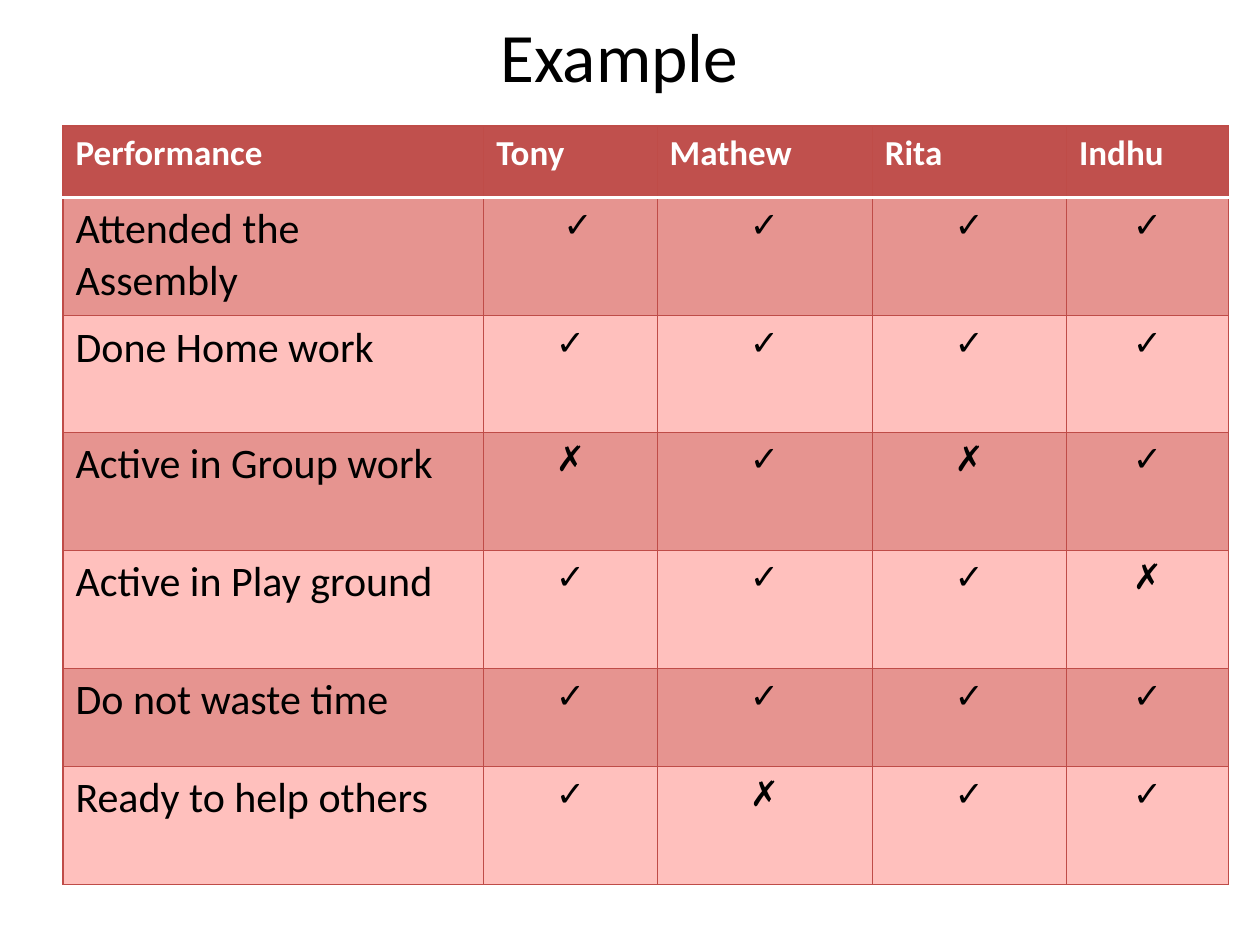
from dataclasses import dataclass

from lxml.etree import SubElement as Sub
from pptx import Presentation
from pptx.dml.color import RGBColor as Rgb
from pptx.enum.text import MSO_ANCHOR as Anchor, MSO_AUTO_SIZE as Fit, PP_ALIGN as Align
from pptx.oxml.ns import qn
from pptx.util import Pt


@dataclass(frozen=True)
class Theme:
    font: str = "Calibri"
    ink: str = "000000"
    white: str = "FFFFFF"
    head: str = "C0504D"
    dark: str = "E69490"
    light: str = "FFC0BD"
    rule: str = "BF4C48"
    title: float = 39.6
    label: float = 24
    body: float = 20


class Deck:
    def __init__(self, theme):
        self.theme = theme
        self.prs = Presentation()
        self.prs.slide_width, self.prs.slide_height = Pt(720), Pt(540)
        self.slide = self.prs.slides.add_slide(self.prs.slide_layouts[5])

    def style(self, para, size, color, align, bold=False):
        para.alignment = align
        font = para.font
        font.name, font.size, font.bold = self.theme.font, Pt(size), bold
        font.color.rgb = Rgb.from_string(color)

    def title(self, text, left, top, width, height, lift):
        shape = self.slide.shapes.title
        shape.left, shape.top = Pt(left), Pt(top)
        shape.width, shape.height = Pt(width), Pt(height)
        frame = shape.text_frame
        frame.text = text
        frame.auto_size = Fit.NONE
        frame.vertical_anchor = Anchor.BOTTOM
        frame.margin_bottom = Pt(lift)
        self.style(frame.paragraphs[0], self.theme.title, self.theme.ink, Align.CENTER)

    def border(self, cell, side, color, width):
        line = Sub(cell._tc.get_or_add_tcPr(), qn("a:ln" + side), w=str(Pt(width)))
        fill = Sub(line, qn("a:solidFill"))
        Sub(fill, qn("a:srgbClr"), val=color)

    def cell(self, cell, text, row, col):
        theme = self.theme
        # Lines come before the fill in the cell properties
        for side in "LRTB":
            under = (row, side) in ((0, "B"), (1, "T"))
            self.border(cell, side, theme.white if under else theme.rule, 2 if under else 0.75)
        cell.fill.solid()
        back = theme.head if row == 0 else theme.dark if row % 2 else theme.light
        cell.fill.fore_color.rgb = Rgb.from_string(back)
        cell.text = text
        para = cell.text_frame.paragraphs[0]
        if row == 0:
            self.style(para, theme.body, theme.white, Align.LEFT, True)
        elif col == 0:
            self.style(para, theme.label, theme.ink, Align.LEFT)
        else:
            self.style(para, theme.body, theme.ink, Align.CENTER)

    def table(self, data, left, top, widths, heights):
        frame = self.slide.shapes.add_table(
            len(heights), len(widths), Pt(left), Pt(top), Pt(sum(widths)), Pt(sum(heights)))
        table = frame.table
        for col, width in zip(table.columns, widths):
            col.width = Pt(width)
        for row, height in zip(table.rows, heights):
            row.height = Pt(height)
        for r, texts in enumerate(data):
            for c, text in enumerate(texts):
                self.cell(table.cell(r, c), text, r, c)
        return table


# Pupils, and one mark per pupil for each habit
PUPILS = ["Performance", "Tony", "Mathew", "Rita", "Indhu"]
HABITS = {
    "Attended the Assembly": "✓✓✓✓",
    "Done Home work": "✓✓✓✓",
    "Active in Group work": "✗✓✗✓",
    "Active in Play ground": "✓✓✓✗",
    "Do not waste time": "✓✓✓✓",
    "Ready to help others": "✓✗✓✓",
}


def main():
    deck = Deck(Theme())
    deck.title("Example", 30, 30, 648, 45, 20)
    data = [PUPILS] + [[habit, *marks] for habit, marks in HABITS.items()]
    table = deck.table(data, 36, 72, [240.5, 99, 123, 111, 92.5],
                       [41, 67.5, 66.5, 67.5, 67.5, 56, 67.5])
    # The first mark sits a little right of centre
    table.cell(1, 1).margin_left = Pt(16)
    deck.prs.save("out.pptx")


if __name__ == "__main__":
    main()
